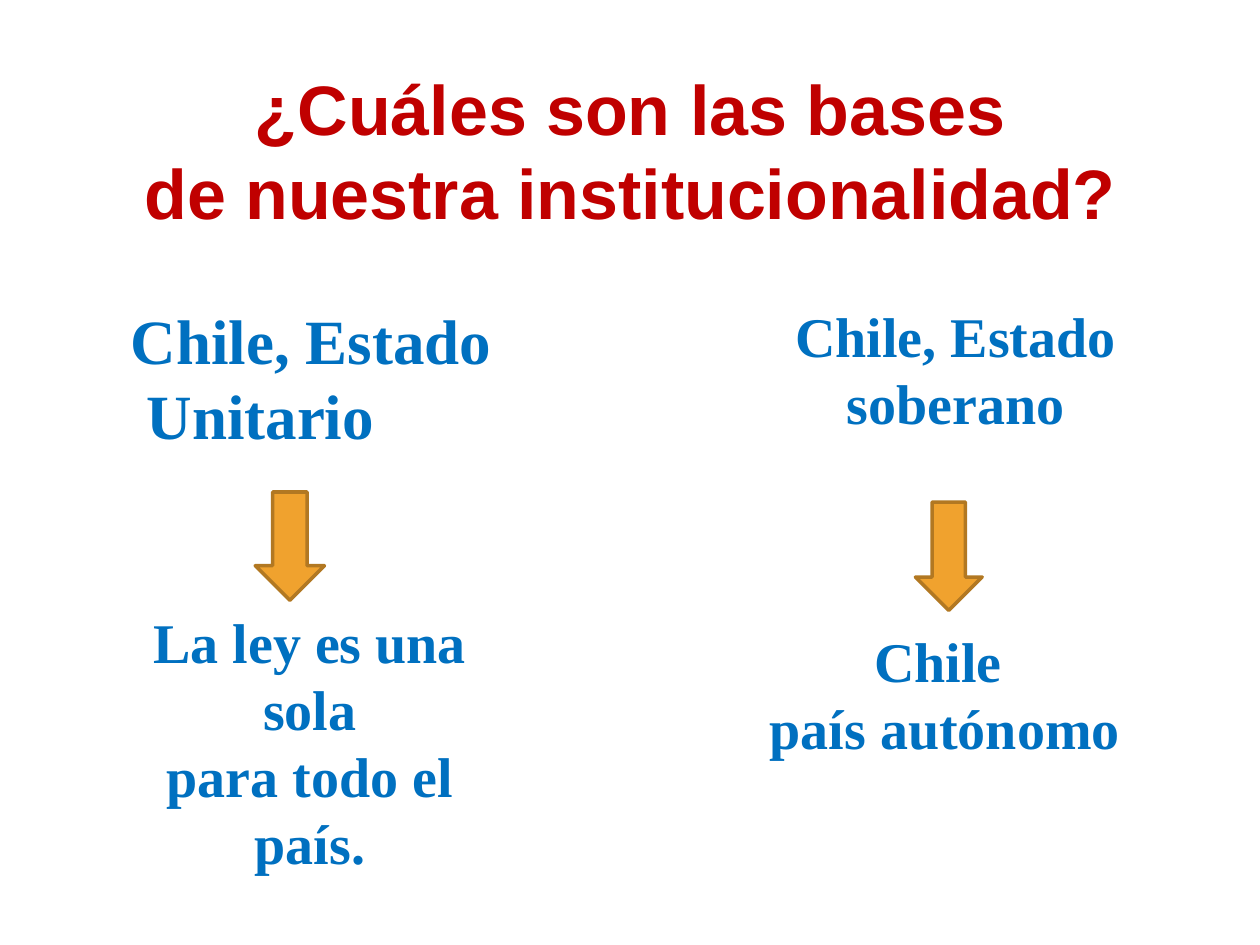
"""Build a slide on the bases of Chile's institutional order."""
from dataclasses import dataclass

from pptx import Presentation
from pptx import util as u
from pptx.dml.color import RGBColor
from pptx.enum import shapes, text

RED = RGBColor(0xC0, 0x00, 0x00)
BLUE = RGBColor(0x00, 0x70, 0xC0)
ORANGE = RGBColor(0xF0, 0xA2, 0x2E)
BROWN = RGBColor(0xB2, 0x78, 0x22)


@dataclass(frozen=True)
class Box:
    left: float
    top: float
    width: float
    height: float

    def lengths(self) -> list[u.Length]:
        return [u.Inches(v) for v in (self.left, self.top, self.width, self.height)]


@dataclass(frozen=True)
class Idea:
    heading: str
    heading_box: Box
    heading_format: dict
    arrow_box: Box
    meaning: str
    meaning_box: Box


IDEAS = [
    Idea("Chile, Estado\n Unitario", Box(0.94, 2.34, 3.09, 1.31),
         {"size": 36, "align": text.PP_ALIGN.LEFT, "wrap": False},
         Box(1.87, 4.06, 0.86, 0.55),
         "La ley es una sola\npara todo el país.", Box(0.78, 4.77, 3.36, 2.26)),
    Idea("Chile, Estado soberano", Box(5.39, 2.34, 4.39, 1.18), {},
         Box(7.1, 4.15, 0.86, 0.53),
         "Chile \npaís autónomo", Box(5, 4.92, 5, 1.18)),
]


def add_text(s, content: str, box: Box, *, size: float = 32,
             font: str = "Times New Roman", color: RGBColor = BLUE,
             align=text.PP_ALIGN.CENTER, wrap: bool = True) -> None:
    tf = s.shapes.add_textbox(*box.lengths()).text_frame
    tf.word_wrap = wrap
    tf.auto_size = text.MSO_AUTO_SIZE.SHAPE_TO_FIT_TEXT
    for i, line in enumerate(content.split("\n")):
        p = tf.add_paragraph() if i else tf.paragraphs[0]
        p.alignment = align
        r = p.add_run()
        r.text = line
        r.font.name = font
        r.font.size = u.Pt(size)
        r.font.bold = True
        r.font.color.rgb = color


def add_arrow(s, box: Box) -> None:
    sp = s.shapes.add_shape(shapes.MSO_SHAPE.RIGHT_ARROW, *box.lengths())
    sp.rotation = 90
    sp.shadow.inherit = False
    sp.fill.solid()
    sp.fill.fore_color.rgb = ORANGE
    sp.line.color.rgb = BROWN
    sp.line.width = u.Pt(2)


def main() -> None:
    prs = Presentation()
    prs.slide_width, prs.slide_height = u.Inches(10), u.Inches(7.5)
    s = prs.slides.add_slide(prs.slide_layouts[6])
    add_text(s, "¿Cuáles son las bases\nde nuestra institucionalidad?",
             Box(0.39, 0.47, 9.22, 1.45), size=40, font="Arial", color=RED)
    for idea in IDEAS:
        add_text(s, idea.heading, idea.heading_box, **idea.heading_format)
        add_text(s, idea.meaning, idea.meaning_box)
        add_arrow(s, idea.arrow_box)
    prs.save("out.pptx")


if __name__ == "__main__":
    main()
